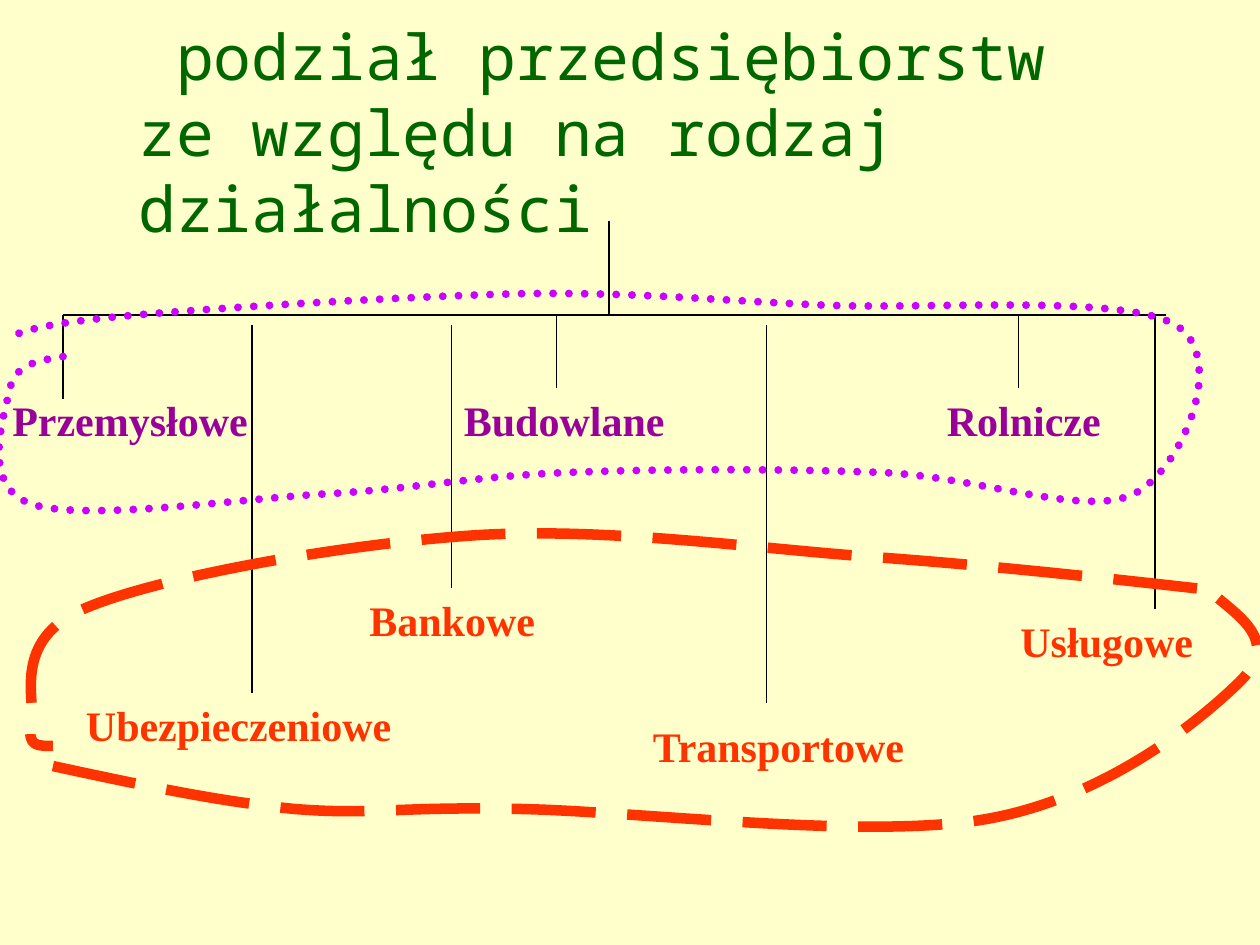
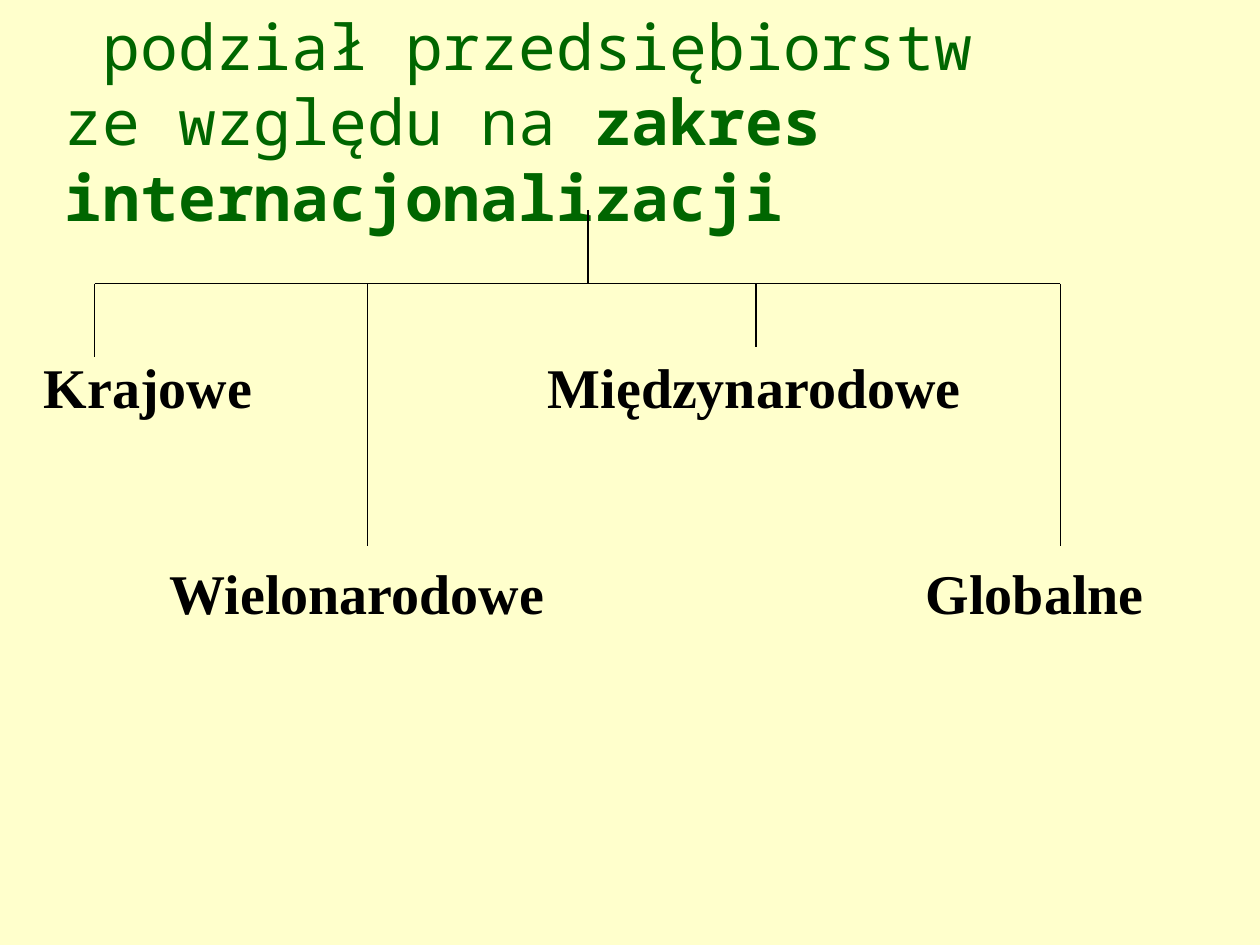
import pptx
import pptx.dml.color
import pptx.enum.dml
import pptx.enum.shapes
import pptx.enum.text
import pptx.oxml
import pptx.oxml.ns
import pptx.util

COLORS = {
    "background": "FFFFCC", "title": "006600", "line": "000000", "text": "000000",
    "production": "990099", "service": "FF3300", "production_ring": "CC00FF",
}
TITLE_FONT, BODY_FONT = "Noto Sans Mono", "Times New Roman"
CELLS_PER_INCH = 12
COLUMNS, ROWS = 120, 90
LABEL_ROWS = 6
RING_UNITS_PER_INCH = 100

ACTIVITY = {
    "title_box": (12, 5, 102, 15),
    "title": [[(" podział przedsiębiorstw ", False)],
              [("ze względu na rodzaj działalności", False)]],
    "trunk": (58, 21, 30),
    "bar": (6, 111),
}
ACTIVITY_BRANCHES = [
    ("Przemysłowe", "production", (0, 37, 25), (6, 30, 38)),
    ("Budowlane", "production", (43, 37, 23), (53, 30, 37)),
    ("Rolnicze", "production", (89, 37, 24), (97, 30, 37)),
    ("Ubezpieczeniowe", "service", (7, 66, 34), (24, 31, 66)),
    ("Bankowe", "service", (34, 56, 22), (43, 31, 56)),
    ("Usługowe", "service", (96, 58, 21), (110, 30, 58)),
    ("Transportowe", "service", (61, 68, 27), (73, 31, 67)),
]
LONG_DASH = pptx.enum.dml.MSO_LINE.LONG_DASH
ROUND_DOT = pptx.enum.dml.MSO_LINE.ROUND_DOT
RINGS = [
    ("service", 6, LONG_DASH, "flat", (42, 608), [
        (107, 622, 172, 636, 233, 642), (294, 647, 317, 640, 408, 642),
        (500, 643, 688, 667, 783, 650), (879, 633, 953, 571, 983, 542),
        (1014, 512, 990, 494, 967, 475)]),
    ("service", 6, LONG_DASH, "flat", (950, 467), [
        (869, 458, 788, 449, 692, 442), (596, 435, 479, 418, 375, 425),
        (271, 432, 125, 458, 67, 483), (8, 508, 29, 557, 25, 575),
        (21, 593, 31, 592, 42, 592)]),
    ("production_ring", 4.5, ROUND_DOT, "rnd", (50, 283), [
        (31, 286, 12, 289, 8, 308), (4, 328, -17, 386, 25, 400),
        (67, 414, 188, 396, 258, 392), (329, 388, 376, 378, 450, 375),
        (524, 372, 625, 372, 700, 375), (775, 378, 861, 411, 900, 392),
        (939, 372, 975, 283, 933, 258), (892, 233, 736, 246, 650, 242),
        (564, 238, 507, 232, 417, 233), (326, 235, 176, 244, 108, 250),
        (40, 256, 24, 261, 8, 267)]),
]

SCOPE = {
    "title_box": (5, 4, 111, 15),
    "title": [[(" podział przedsiębiorstw ", False)],
              [("ze względu na", False), (" zakres internacjonalizacji", True)]],
    "trunk": (56, 20, 27),
    "bar": (9, 101),
}
SCOPE_STEMS = [(9, 27, 34), (72, 27, 33), (101, 27, 52), (35, 27, 52)]
SCOPE_BOX = (3, 33, 108, 27)
SCOPE_LINES = [
    ("Krajowe\tMiędzynarodowe", [4], 0),
    ("\tWielonarodowe\tGlobalne", [1, 7], 79),
]


def cells(count):
    return pptx.util.Inches(count / CELLS_PER_INCH)


def color(name):
    return pptx.dml.color.RGBColor.from_string(COLORS[name])


def add_run(paragraph, text, font, size, color_name, bold):
    run = paragraph.add_run()
    run.text = text
    run.font.name = font
    run.font.size = pptx.util.Pt(size)
    run.font.bold = bold
    run.font.color.rgb = color(color_name)


def add_text_box(slide, box):
    shape = slide.shapes.add_textbox(*map(cells, box))
    shape.text_frame.word_wrap = True
    return shape


def add_line(slide, start, end):
    connector = slide.shapes.add_connector(
        pptx.enum.shapes.MSO_CONNECTOR.STRAIGHT, *map(cells, start + end))
    connector.line.color.rgb = color("line")
    connector.line.width = pptx.util.Pt(0.75)
    connector._element.spPr.append(pptx.oxml.parse_xml(
        f"<a:effectLst {pptx.oxml.ns.nsdecls('a')}/>"))
    return connector


def add_stem(slide, stem):
    column, top, bottom = stem
    return add_line(slide, (column, top), (column, bottom))


def add_tree_slide(presentation, content):
    slide = presentation.slides.add_slide(presentation.slide_layouts[6])
    frame = add_text_box(slide, content["title_box"]).text_frame
    frame.vertical_anchor = pptx.enum.text.MSO_ANCHOR.MIDDLE
    paragraph = frame.paragraphs[0]
    for index, line in enumerate(content["title"]):
        if index:
            paragraph.add_line_break()
        for text, bold in line:
            add_run(paragraph, text, TITLE_FONT, 36, "title", bold)
    add_stem(slide, content["trunk"])
    left, right = content["bar"]
    bar_row = content["trunk"][2]
    add_line(slide, (left, bar_row), (right, bar_row))
    return slide


def add_branch(slide, text, color_name, label, stem):
    left, top, width = label
    shape = add_text_box(slide, (left, top, width, LABEL_ROWS))
    shape.text_frame.auto_size = pptx.enum.text.MSO_AUTO_SIZE.SHAPE_TO_FIT_TEXT
    add_run(shape.text_frame.paragraphs[0], text, BODY_FONT, 24, color_name, True)
    connector = add_stem(slide, stem)
    if (stem[0], stem[2]) == (left + width / 2, top):
        connector.end_connect(shape, 0)


def bend_segments(shape):
    segments = shape._element.xpath(".//a:lnTo")
    for index in range(0, len(segments), 3):
        curve = pptx.oxml.parse_xml(
            f"<a:cubicBezTo {pptx.oxml.ns.nsdecls('a')}/>")
        segments[index].addprevious(curve)
        for segment in segments[index:index + 3]:
            curve.append(segment[0])
            segment.getparent().remove(segment)


def add_ring(slide, color_name, width, dash, cap, start, curves):
    builder = slide.shapes.build_freeform(
        *start, scale=pptx.util.Inches(1) / RING_UNITS_PER_INCH)
    points = [curve[index:index + 2] for curve in curves for index in (0, 2, 4)]
    builder.add_line_segments(points, close=False)
    shape = builder.convert_to_shape()
    bend_segments(shape)
    shape.shadow.inherit = False
    shape.fill.background()
    shape.line.color.rgb = color(color_name)
    shape.line.width = pptx.util.Pt(width)
    shape.line.dash_style = dash
    shape._element.spPr.find(pptx.oxml.ns.qn("a:ln")).set("cap", cap)


def set_tab_stops(paragraph, stops):
    stop_tags = "".join(
        f'<a:tab pos="{pptx.util.Inches(stop)}" algn="l"/>' for stop in stops)
    paragraph._p.get_or_add_pPr().append(pptx.oxml.parse_xml(
        f"<a:tabLst {pptx.oxml.ns.nsdecls('a')}>{stop_tags}</a:tabLst>"))


def add_scope_names(slide):
    frame = add_text_box(slide, SCOPE_BOX).text_frame
    for index, (text, stops, space) in enumerate(SCOPE_LINES):
        paragraph = frame.add_paragraph() if index else frame.paragraphs[0]
        paragraph.space_before = pptx.util.Pt(space)
        set_tab_stops(paragraph, stops)
        add_run(paragraph, text, BODY_FONT, 32, "text", True)


def main():
    presentation = pptx.Presentation()
    presentation.slide_width = cells(COLUMNS)
    presentation.slide_height = cells(ROWS)
    background = presentation.slide_master.background.fill
    background.solid()
    background.fore_color.rgb = color("background")

    activity_slide = add_tree_slide(presentation, ACTIVITY)
    for branch in ACTIVITY_BRANCHES:
        add_branch(activity_slide, *branch)
    for ring in RINGS:
        add_ring(activity_slide, *ring)

    scope_slide = add_tree_slide(presentation, SCOPE)
    add_scope_names(scope_slide)
    for stem in SCOPE_STEMS:
        add_stem(scope_slide, stem)

    presentation.save("out.pptx")


if __name__ == "__main__":
    main()
